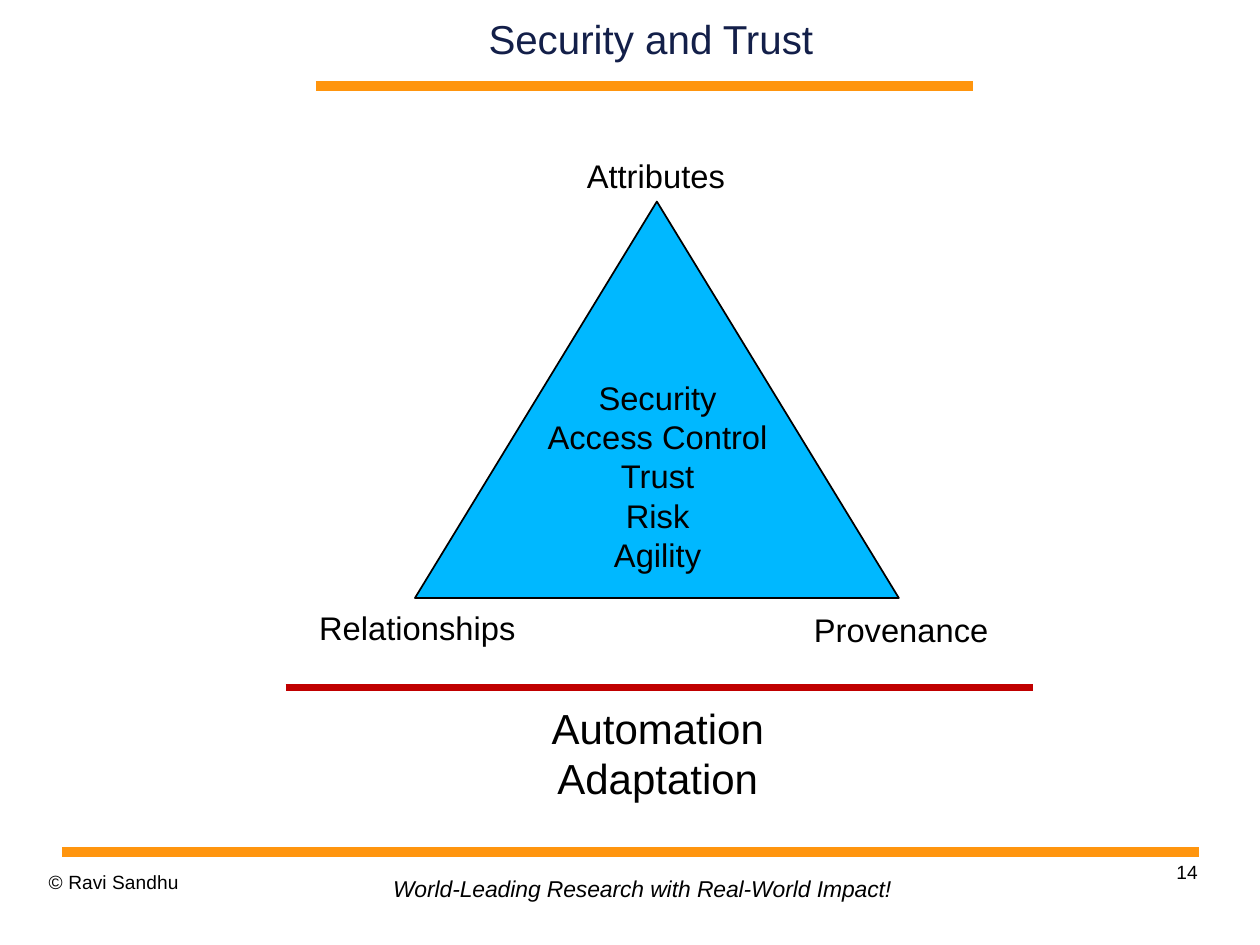
from dataclasses import dataclass

from lxml import etree
from pptx import Presentation
from pptx.dml.color import RGBColor as RGB
from pptx.enum.shapes import MSO_CONNECTOR as Conn, MSO_SHAPE as Shape
from pptx.enum.text import MSO_ANCHOR as Anchor, MSO_AUTO_SIZE as Auto
from pptx.enum.text import PP_ALIGN as Align
from pptx.oxml.ns import qn
from pptx.util import Inches, Pt


@dataclass(frozen=True)
class Theme:
    font: str = "Arial"
    ink: str = "000000"
    navy: str = "131F49"
    gold: str = "FF950E"
    red: str = "C00000"
    blue: str = "00B8FF"
    title: float = 17.25
    large: float = 18
    body: float = 14
    motto: float = 9.75
    small: float = 8.25


class Deck:
    def __init__(self, theme, wide):
        self.theme = theme
        self.prs = Presentation()
        # Four by three page
        self.prs.slide_width = Inches(wide)
        self.prs.slide_height = Inches(wide * 3 / 4)
        self.slide = self.prs.slides.add_slide(self.prs.slide_layouts[6])

    def rule(self, left, right, y, color, width):
        """Draw a level line."""
        line = self.slide.shapes.add_connector(
            Conn.STRAIGHT, Inches(left), Inches(y), Inches(right), Inches(y))
        line.line.color.rgb = RGB.from_string(color)
        line.line.width = Pt(width)
        etree.SubElement(line._element.spPr, qn("a:effectLst"))

    def peak(self, left, top, wide, high):
        """Draw the filled triangle."""
        shape = self.slide.shapes.add_shape(
            Shape.ISOSCELES_TRIANGLE,
            Inches(left), Inches(top), Inches(wide), Inches(high))
        shape.shadow.inherit = False
        shape.fill.solid()
        shape.fill.fore_color.rgb = RGB.from_string(self.theme.blue)
        shape.line.color.rgb = RGB.from_string(self.theme.ink)
        shape.line.width = Pt(0.75)

    def text(self, left, top, wide, high, lines, size, color=None,
             align=Align.CENTER, anchor=Anchor.TOP, inset=(0.1, 0.05),
             wrap=True, grow=True, italic=False, space=None):
        """Place a text box with one paragraph per line."""
        box = self.slide.shapes.add_textbox(
            Inches(left), Inches(top), Inches(wide), Inches(high))
        frame = box.text_frame
        frame.word_wrap = wrap
        frame.auto_size = Auto.SHAPE_TO_FIT_TEXT if grow else Auto.NONE
        frame.vertical_anchor = anchor
        frame.margin_left = frame.margin_right = Inches(inset[0])
        frame.margin_top = frame.margin_bottom = Inches(inset[1])
        for i, line in enumerate(lines):
            para = frame.add_paragraph() if i else frame.paragraphs[0]
            para.alignment = align
            if space:
                para.line_spacing = space
            run = para.add_run()
            run.text = line
            font = run.font
            font.name, font.size, font.italic = self.theme.font, Pt(size), italic
            font.color.rgb = RGB.from_string(color or self.theme.ink)

    def save(self):
        self.prs.save("out.pptx")


def main():
    look = Theme()
    deck = Deck(look, 7.5)
    flush = (0, 0)

    # Title and footer rules
    deck.rule(1.88, 5.79, 0.51, look.gold, 4.31)
    deck.rule(0.37, 7.14, 5.07, look.gold, 4.31)

    # Footer
    deck.text(5.38, 5.12, 1.75, 0.39, ["14"], look.small,
              align=Align.RIGHT, inset=flush, grow=False, space=1.01)
    deck.text(0.29, 5.18, 1.75, 0.29, ["© Ravi Sandhu"], look.small,
              align=Align.LEFT, inset=flush, grow=False, space=1.01)
    deck.text(2.28, 5.18, 3.11, 0.23,
              ["World-Leading Research with Real-World Impact!"], look.motto,
              align=Align.LEFT, inset=(0.06, 0.03), wrap=False, italic=True)

    # Title
    deck.text(1.94, 0.04, 3.87, 0.38, ["Security and Trust"], look.title,
              color=look.navy, anchor=Anchor.MIDDLE, inset=flush, grow=False)

    # Triangle, its goals and its corners
    deck.peak(2.47, 1.2, 2.88, 2.36)
    deck.text(3.13, 2.2, 1.57, 1.28,
              ["Security", "Access Control", "Trust", "Risk", "Agility"],
              look.body)
    for left, top, name in [(3.12, 0.88, "Attributes"),
                            (1.7, 3.57, "Relationships"),
                            (4.58, 3.58, "Provenance")]:
        deck.text(left, top, 1.57, 0.34, [name], look.body)

    # Base
    deck.text(2.92, 4.13, 1.99, 0.71, ["Automation", "Adaptation"], look.large)
    deck.rule(1.7, 6.15, 4.09, look.red, 3)

    deck.save()


if __name__ == "__main__":
    main()
